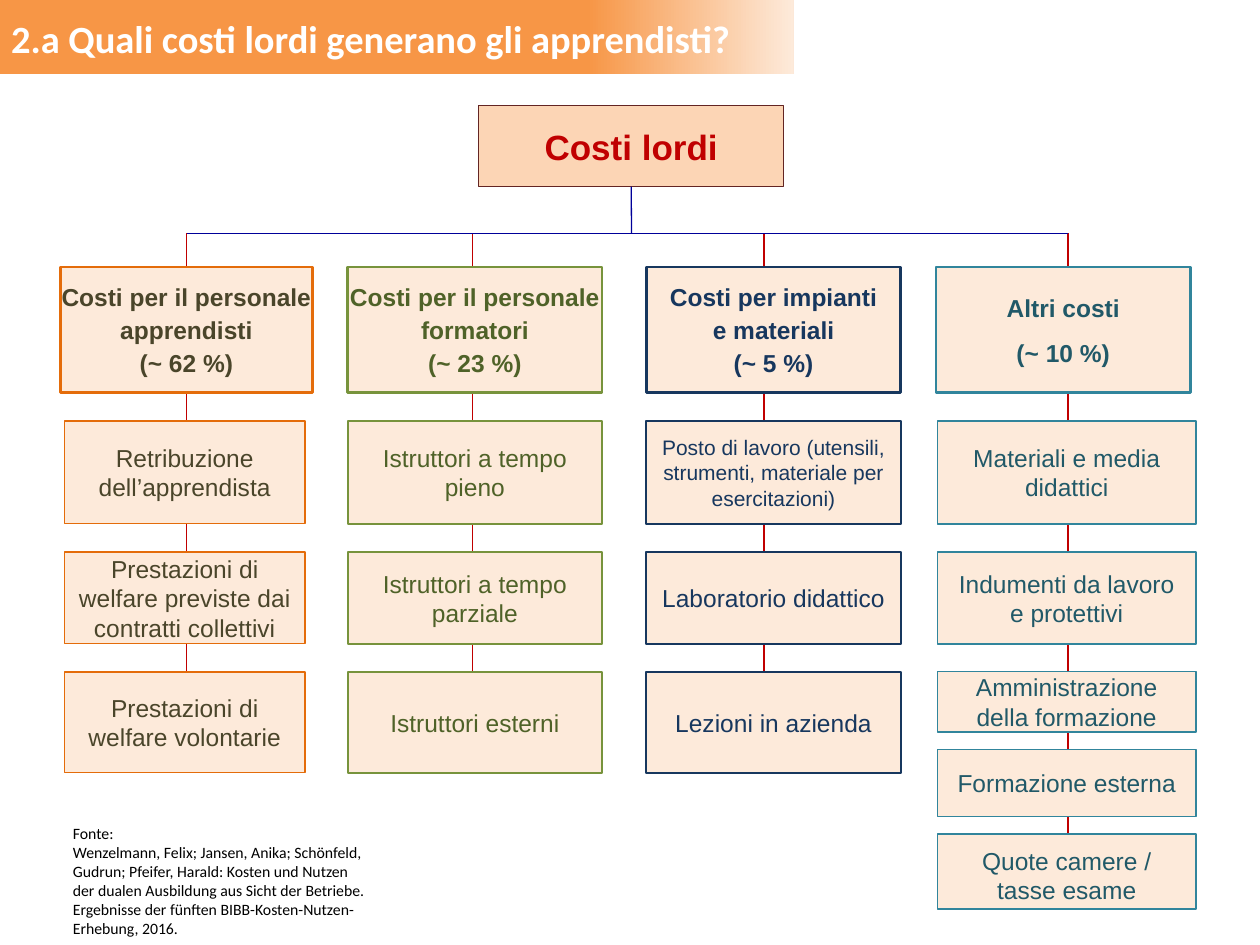
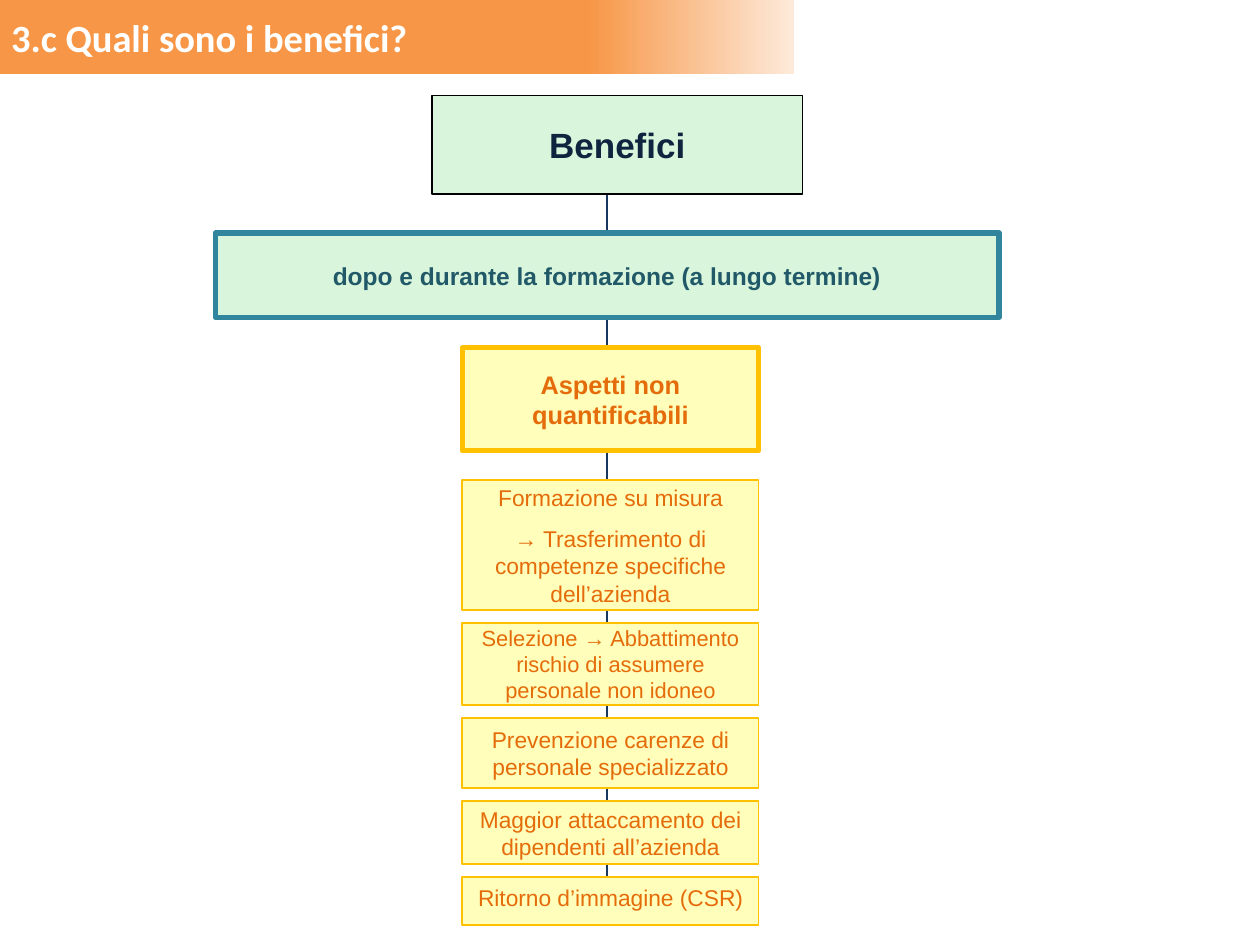
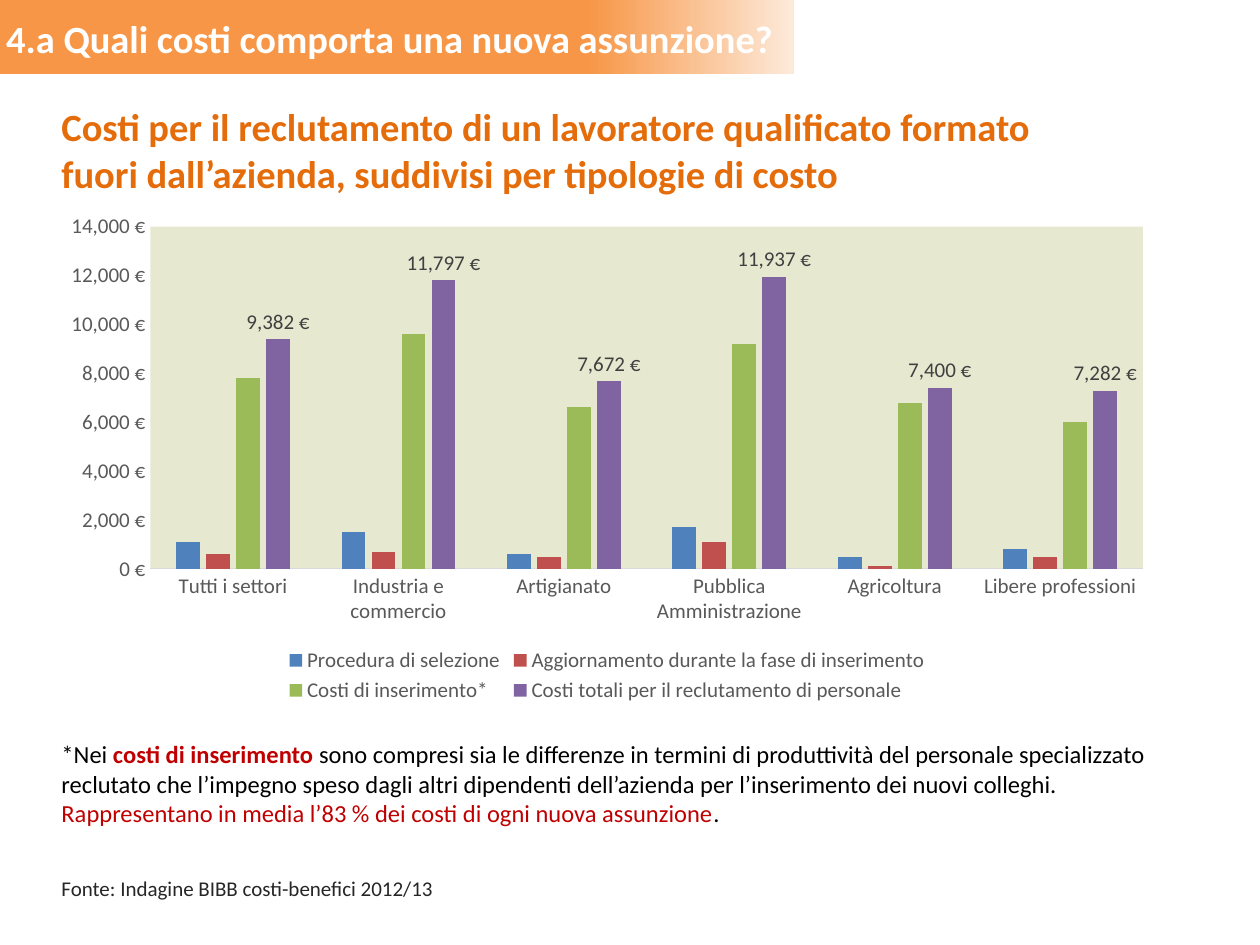
from lxml.etree import SubElement
from pptx import Presentation
from pptx.chart.data import CategoryChartData
from pptx.dml.color import RGBColor
from pptx.enum.chart import XL_CHART_TYPE, XL_LABEL_POSITION, XL_LEGEND_POSITION, XL_TICK_MARK
from pptx.enum.shapes import MSO_CONNECTOR, MSO_SHAPE
from pptx.enum.text import MSO_ANCHOR, MSO_AUTO_SIZE, PP_ALIGN
from pptx.oxml import parse_xml
from pptx.oxml.ns import nsdecls, qn
from pptx.util import Cm, Pt

HEADING_FONT, BOX_FONT = "Calibri", "Arial"
WHITE = RGBColor(0xFF, 0xFF, 0xFF)
BLACK = RGBColor(0x00, 0x00, 0x00)
BAND_ORANGE = RGBColor(0xF7, 0x96, 0x46)
PALE_ORANGE = RGBColor(0xFD, 0xEA, 0xDA)
PEACH = RGBColor(0xFC, 0xD5, 0xB5)
MAROON = RGBColor(0x63, 0x25, 0x23)
RED = RGBColor(0xC0, 0x00, 0x00)
BLUE = RGBColor(0x00, 0x00, 0x99)
NAVY = RGBColor(0x17, 0x37, 0x5E)
DARK_NAVY = RGBColor(0x0F, 0x24, 0x3E)
ORANGE = RGBColor(0xE4, 0x6C, 0x0A)
BROWN = RGBColor(0x4A, 0x45, 0x2A)
GREEN = RGBColor(0x77, 0x93, 0x3C)
DARK_GREEN = RGBColor(0x4F, 0x62, 0x28)
TEAL = RGBColor(0x31, 0x85, 0x9C)
DARK_TEAL = RGBColor(0x21, 0x59, 0x68)
MINT = RGBColor(0xD9, 0xF5, 0xDC)
PALE_YELLOW = RGBColor(0xFF, 0xFE, 0xBA)
GOLD = RGBColor(0xFF, 0xC0, 0x00)
AXIS_TEXT = RGBColor(0x59, 0x59, 0x59)
AXIS_LINE = RGBColor(0xD9, 0xD9, 0xD9)
LABEL_TEXT = RGBColor(0x40, 0x40, 0x40)
SOURCE_TEXT = RGBColor(0x26, 0x26, 0x26)
PLOT_FILL = "E7E8D0"

# Cost tree: lengths in cm; an item is (text, top, height, text size, top inset)
ROW_1, ROW_2, ROW_3 = (8.49, 2.07), (11.13, 1.85), (13.55, 2.03)
HEAD_TOP, HEAD_HEIGHT, BUS_TOP = 5.38, 2.54, 4.7
COST_COLUMNS = [
    {"head": ["Costi per il personale", "apprendisti", "(~ 62 %)"], "spacing": 2,
     "head_at": (1.22, 5.08), "items_at": (1.3, 4.85), "axis": 3.76,
     "line": ORANGE, "line_width": 0.75, "text": BROWN,
     "items": [("Retribuzione dell’apprendista", *ROW_1, 14, None),
               ("Prestazioni di welfare previste dai contratti collettivi", *ROW_2, 14, None),
               ("Prestazioni di welfare volontarie", *ROW_3, 14, None)]},
    {"head": ["Costi per il personale", "formatori", "(~ 23 %)"], "spacing": 2,
     "head_at": (7.01, 5.13), "items_at": (7.01, 5.13), "axis": 9.52,
     "line": GREEN, "line_width": 1, "text": DARK_GREEN,
     "items": [("Istruttori a tempo pieno", *ROW_1, 14, None),
               ("Istruttori a tempo parziale", *ROW_2, 14, None),
               ("Istruttori esterni", *ROW_3, 14, None)]},
    {"head": ["Costi per impianti", "e materiali", "(~ 5 %)"], "spacing": 2,
     "head_at": (13.03, 5.13), "items_at": (13.03, 5.13), "axis": 15.4,
     "line": NAVY, "line_width": 1, "text": NAVY,
     "items": [("Posto di lavoro (utensili, strumenti, materiale per esercitazioni)",
                *ROW_1, 12, None),
               ("Laboratorio didattico", *ROW_2, 14, None),
               ("Lezioni in azienda", *ROW_3, 14, None)]},
    {"head": ["Altri costi", "(~ 10 %)"], "spacing": 8.8,
     "head_at": (18.87, 5.13), "items_at": (18.9, 5.21), "axis": 21.53,
     "line": TEAL, "line_width": 1, "text": DARK_TEAL,
     "items": [("Materiali e media didattici", *ROW_1, 14, None),
               ("Indumenti da lavoro e protettivi", *ROW_2, 14, None),
               ("Amministrazione della formazione", 13.54, 1.22, 14, None),
               ("Formazione esterna", 15.11, 1.35, 14, None),
               ("Quote camere /\ntasse esame", 16.81, 1.52, 14, 0.24)]},
]
COST_SOURCE = (
    "Fonte:\nWenzelmann, Felix; Jansen, Anika; Schönfeld, Gudrun; Pfeifer, Harald: "
    "Kosten und Nutzen der dualen Ausbildung aus Sicht der Betriebe. "
    "Ergebnisse der fünften BIBB-Kosten-Nutzen-Erhebung, 2016.")

# Benefit stack: (paragraphs, height, text size, top inset)
BENEFITS = [
    (["Formazione su misura",
      "→ Trasferimento di competenze specifiche dell’azienda"], 2.62, 13, None),
    (["Selezione → Abbattimento rischio di assumere personale non idoneo"], 1.65, 12.5, None),
    (["Prevenzione carenze di personale specializzato"], 1.42, 13, None),
    (["Maggior attaccamento dei dipendenti all’azienda"], 1.27, 13, None),
    (["Ritorno d’immagine (CSR)"], 0.97, 13, 0.13),
]
BENEFIT_LEFT, BENEFIT_WIDTH, BENEFIT_TOP, BENEFIT_GAP = 9.32, 5.97, 9.68, 0.26
BENEFIT_AXIS = 12.24

EURO_FORMAT = '#,##0\\ "€"'
SECTORS = ["Tutti i settori", "Industria e commercio", "Artigianato",
           "Pubblica Amministrazione", "Agricoltura", "Libere professioni"]
RECRUITING_COSTS = [
    ("Procedura di selezione", RGBColor(0x4F, 0x81, 0xBD), [1100, 1500, 600, 1700, 500, 800]),
    ("Aggiornamento durante la fase di inserimento", RGBColor(0xC0, 0x50, 0x4D),
     [600, 700, 500, 1100, 100, 500]),
    ("Costi di inserimento*", RGBColor(0x9B, 0xBB, 0x59), [7800, 9600, 6600, 9200, 6800, 6000]),
    ("Costi totali per il reclutamento di personale", RGBColor(0x80, 0x64, 0xA2),
     [9382, 11797, 7672, 11937, 7400, 7282]),
]
RECRUITING_HEADING = ("Costi per il reclutamento di un lavoratore qualificato formato "
                      "fuori dall’azienda, suddivisi per tipologie di costo")
RECRUITING_NOTE = [
    ("*Nei ", BLACK, False),
    ("costi di inserimento ", RED, True),
    ("sono compresi sia le differenze in termini di produttività del personale "
     "specializzato reclutato che l’impegno speso dagli altri dipendenti dell’azienda "
     "per l’inserimento dei nuovi colleghi. ", BLACK, False),
    ("Rappresentano in media l’83 % dei costi di ogni nuova assunzione", RED, False),
    (".", BLACK, False),
]


def style_font(font, name, size, color, bold=False):
    font.name, font.size, font.bold = name, Pt(size), bold
    font.color.rgb = color


def add_runs(paragraph, text, *style):
    """Write text into the paragraph, with a line break at each newline."""
    for index, line in enumerate(text.split("\n")):
        if index:
            paragraph.add_line_break()
        run = paragraph.add_run()
        run.text = line
        style_font(run.font, *style)


def add_box(slide, place, paragraphs, fill, line, line_width, size, color,
            bold=False, wrap=True, spacing=0, top_inset=None):
    """Add a bordered box; text is centred unless a top inset hangs it from the top."""
    shape = slide.shapes.add_shape(MSO_SHAPE.RECTANGLE, *map(Cm, place))
    shape.shadow.inherit = False
    shape.fill.solid()
    shape.fill.fore_color.rgb = fill
    shape.line.color.rgb = line
    shape.line.width = Pt(line_width)
    frame = shape.text_frame
    frame.word_wrap = wrap
    frame.vertical_anchor = MSO_ANCHOR.MIDDLE
    if top_inset is not None:
        frame.vertical_anchor = MSO_ANCHOR.TOP
        frame.margin_top = Cm(top_inset)
        frame.margin_left = frame.margin_right = Cm(0.1)
    for index, text in enumerate(paragraphs):
        paragraph = frame.add_paragraph() if index else frame.paragraphs[0]
        paragraph.alignment = PP_ALIGN.CENTER
        if index:
            paragraph.space_before = Pt(spacing)
        add_runs(paragraph, text, BOX_FONT, size, color, bold)
    return shape


def add_line(slide, start, end, color, width):
    connector = slide.shapes.add_connector(MSO_CONNECTOR.STRAIGHT, *map(Cm, start + end))
    connector.line.color.rgb = color
    connector.line.width = Pt(width)
    SubElement(connector.element.spPr, qn("a:effectLst"))
    return connector


def add_note(slide, place, runs, size):
    """Add a Calibri text box from (text, colour, bold) runs."""
    frame = slide.shapes.add_textbox(*map(Cm, place)).text_frame
    frame.word_wrap = True
    for text, color, bold in runs:
        add_runs(frame.paragraphs[0], text, HEADING_FONT, size, color, bold)
    return frame


def add_band(slide, layout):
    """Draw the title band and move it to the layout, behind its placeholders."""
    band = slide.shapes.add_shape(MSO_SHAPE.RECTANGLE, 0, 0, Cm(16), Cm(1.5))
    band.shadow.inherit = False
    band.line.fill.background()
    band.fill.gradient()
    band.fill.gradient_angle = 0
    stops = zip(band.fill.gradient_stops, [(0.74, BAND_ORANGE), (1, PALE_ORANGE)])
    for stop, (position, color) in stops:
        stop.position = position
        stop.color.rgb = color
    layout.shapes.element.insert(2, band.element)


def add_titled_slide(presentation, layout, text, left=-0.03, top=0.18, width=16.13):
    slide = presentation.slides.add_slide(layout)
    title = slide.shapes.title
    title.left, title.top, title.width, title.height = map(Cm, (left, top, width, 1.19))
    frame = title.text_frame
    frame.auto_size = MSO_AUTO_SIZE.NONE
    frame.word_wrap = True
    frame.vertical_anchor = MSO_ANCHOR.MIDDLE
    frame.paragraphs[0].alignment = PP_ALIGN.LEFT
    add_runs(frame.paragraphs[0], text, HEADING_FONT, 22, WHITE, True)
    return slide


def build_cost_tree(slide):
    root = add_box(slide, (9.65, 2.13, 6.15, 1.63), ["Costi lordi"], PEACH, MAROON, 0.75,
                   20, RED, bold=True, wrap=False)
    trunk = add_line(slide, (12.73, 3.76), (12.73, BUS_TOP), BLUE, 0.75)
    trunk.begin_connect(root, 2)
    for column in COST_COLUMNS:
        last_top = column["items"][-1][1]
        add_line(slide, (column["axis"], BUS_TOP), (column["axis"], last_top + 0.3), RED, 0.75)
    add_line(slide, (COST_COLUMNS[0]["axis"], BUS_TOP), (COST_COLUMNS[-1]["axis"], BUS_TOP),
             BLUE, 0.75)
    for column in COST_COLUMNS:
        left, width = column["head_at"]
        add_box(slide, (left, HEAD_TOP, width, HEAD_HEIGHT), column["head"], PALE_ORANGE,
                column["line"], 1.5, 14, column["text"], bold=True, wrap=False,
                spacing=column["spacing"])
        left, width = column["items_at"]
        for text, top, height, size, top_inset in column["items"]:
            add_box(slide, (left, top, width, height), [text], PALE_ORANGE, column["line"],
                    column["line_width"], size, column["text"], top_inset=top_inset)
    add_note(slide, (1.22, 16.48, 6.45, 2.57), [(COST_SOURCE, BLACK, False)], 9)


def build_benefit_stack(slide):
    for top, bottom in [(3.4, 7.37), (7.49, 17.73)]:
        add_line(slide, (BENEFIT_AXIS, top), (BENEFIT_AXIS, bottom), NAVY, 1.5)
    add_box(slide, (8.71, 1.93, 7.47, 1.98), ["Benefici"], MINT, BLACK, 0.75,
            20, DARK_NAVY, bold=True, wrap=False)
    add_box(slide, (4.34, 4.7, 15.8, 1.7), ["dopo e durante la formazione (a lungo termine)"],
            MINT, TEAL, 3, 14, DARK_TEAL, bold=True, wrap=False)
    add_box(slide, (BENEFIT_LEFT, 7.01, BENEFIT_WIDTH, 2.08), ["Aspetti non quantificabili"],
            PALE_YELLOW, GOLD, 3, 14.5, ORANGE, bold=True)
    top = BENEFIT_TOP
    for paragraphs, height, size, top_inset in BENEFITS:
        add_box(slide, (BENEFIT_LEFT, top, BENEFIT_WIDTH, height), paragraphs, PALE_YELLOW,
                GOLD, 1, size, ORANGE, spacing=8.1, top_inset=top_inset)
        top += height + BENEFIT_GAP


def add_recruiting_chart(slide):
    data = CategoryChartData()
    data.categories = SECTORS
    for name, _, values in RECRUITING_COSTS:
        data.add_series(name, values)
    chart = slide.shapes.add_chart(XL_CHART_TYPE.COLUMN_CLUSTERED, Cm(0.99), Cm(4.11),
                                   Cm(22.5), Cm(10.16), data).chart
    style_font(chart.font, HEADING_FONT, 10, BLACK)
    chart.has_title = False
    chart.has_legend = True
    chart.legend.position = XL_LEGEND_POSITION.BOTTOM
    chart.legend.include_in_layout = False
    style_font(chart.legend.font, HEADING_FONT, 12, AXIS_TEXT)

    for axis in (chart.category_axis, chart.value_axis):
        axis.major_tick_mark = axis.minor_tick_mark = XL_TICK_MARK.NONE
        axis.has_major_gridlines = False
        style_font(axis.tick_labels.font, HEADING_FONT, 12, AXIS_TEXT)
    chart.category_axis.format.line.color.rgb = AXIS_LINE
    chart.category_axis.format.line.width = Pt(0.75)
    value_axis = chart.value_axis
    value_axis.format.line.fill.background()
    value_axis.minimum_scale, value_axis.maximum_scale = 0, 14000
    value_axis.major_unit = 2000
    value_axis.tick_labels.number_format = EURO_FORMAT
    value_axis.tick_labels.number_format_is_linked = False

    plot = chart.plots[0]
    plot.gap_width, plot.overlap, plot.vary_by_categories = 219, -27, False
    for series, (_, color, _) in zip(plot.series, RECRUITING_COSTS):
        series.format.fill.solid()
        series.format.fill.fore_color.rgb = color
    labels = plot.series[-1].data_labels
    labels.show_value = True
    labels.position = XL_LABEL_POSITION.OUTSIDE_END
    labels.number_format = EURO_FORMAT
    labels.number_format_is_linked = False
    style_font(labels.font, HEADING_FONT, 12, LABEL_TEXT)

    plot_area = chart.element.find(".//" + qn("c:plotArea"))
    plot_area.append(parse_xml(
        f'<c:spPr {nsdecls("c", "a")}><a:solidFill><a:srgbClr val="{PLOT_FILL}"/>'
        '</a:solidFill><a:ln><a:noFill/></a:ln></c:spPr>'))


def build_recruiting_costs(slide):
    add_note(slide, (0.99, 1.96, 21.11, 2.13), [(RECRUITING_HEADING, ORANGE, True)], 22)
    add_recruiting_chart(slide)
    add_note(slide, (0.99, 14.78, 23.11, 2.06), RECRUITING_NOTE, 14)
    source = add_note(slide, (0.99, 17.3, 8.92, 1.19),
                      [("Fonte: Indagine BIBB costi-benefici 2012/13", SOURCE_TEXT, False)], 12)
    source.vertical_anchor = MSO_ANCHOR.MIDDLE


def main():
    presentation = Presentation()
    presentation.slide_width, presentation.slide_height = Cm(25.4), Cm(19.05)
    layout = presentation.slide_layouts[5]
    costs = add_titled_slide(presentation, layout,
                             "2.a Quali costi lordi generano gli apprendisti?")
    add_band(costs, layout)
    build_cost_tree(costs)
    build_benefit_stack(add_titled_slide(presentation, layout, "3.c Quali sono i benefici?",
                                         top=0.15))
    build_recruiting_costs(add_titled_slide(
        presentation, layout, "4.a Quali costi comporta una nuova assunzione?",
        left=-0.13, width=16.84))
    presentation.save("out.pptx")


if __name__ == "__main__":
    main()
